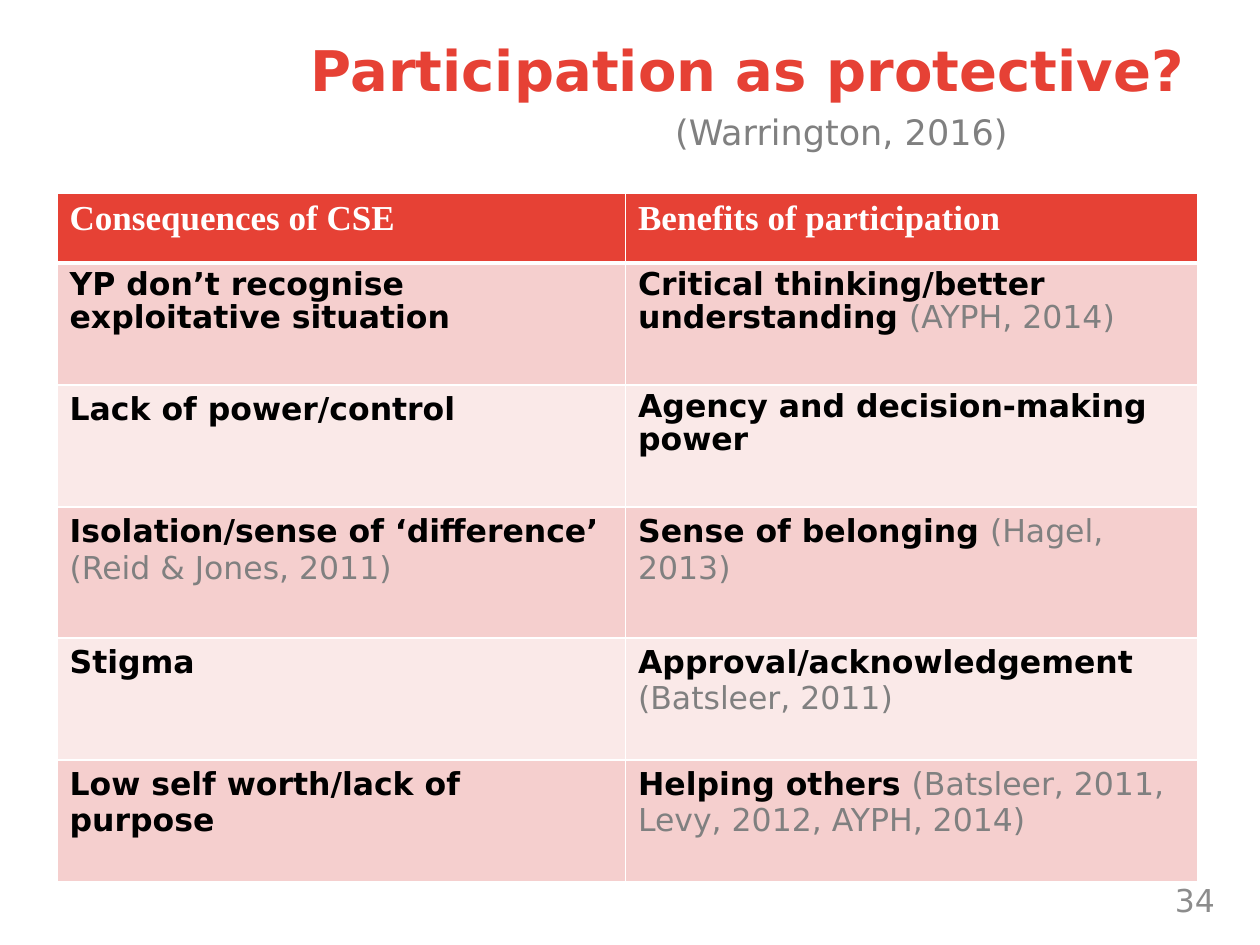
"""Build the slide on participation as protection, with its two-column table."""
from lxml import etree
from pptx import Presentation
from pptx import util as u
from pptx.dml.color import RGBColor
from pptx.enum import text
from pptx.oxml import ns

RED, WHITE, BLACK, GREY = "E64135", "FFFFFF", "000000", "808080"
BANDS = ("F5CFCE", "FAE9E8")
BODY_FONT, HEADER_FONT = "DejaVu Sans", "Times New Roman"

HEADERS = ("Consequences of CSE", "Benefits of participation")
ROWS = [
    (("YP don’t recognise exploitative situation", ""),
     ("Critical thinking/better understanding ", "(AYPH, 2014)")),
    (("Lack of power/control", ""),
     ("Agency and decision-making power", "")),
    (("Isolation/sense of ‘difference’ ", "(Reid & Jones, 2011)"),
     ("Sense of belonging ", "(Hagel, 2013)")),
    (("Stigma", ""),
     ("Approval/acknowledgement ", "(Batsleer, 2011)")),
    (("Low self worth/lack of purpose", ""),
     ("Helping others ", "(Batsleer, 2011, Levy, 2012, AYPH, 2014)")),
]
TIGHT_CELLS = {(1, 0), (1, 1), (2, 1)}
COLUMN_WIDTHS = (11.46, 11.53)
ROW_HEIGHTS = (1.41, 2.46, 2.46, 2.64, 2.46, 2.46)


def color(value):
    return RGBColor.from_string(value)


def add_run(paragraph, words, size, ink, bold=False, face=BODY_FONT):
    run = paragraph.add_run()
    run.text = words
    run.font.size = u.Pt(size)
    run.font.name = face
    run.font.bold = bold
    run.font.color.rgb = color(ink)


def add_label(slide, place, words, size, ink, bold=False, align=text.PP_ALIGN.LEFT,
              anchor=text.MSO_ANCHOR.TOP, wrap=True, spacing=None):
    frame = slide.shapes.add_textbox(*map(u.Cm, place)).text_frame
    frame.word_wrap = wrap
    frame.vertical_anchor = anchor
    paragraph = frame.paragraphs[0]
    paragraph.alignment = align
    paragraph.line_spacing = spacing
    add_run(paragraph, words, size, ink, bold)


def style_cell(cell, fill, bottom_width):
    cell.fill.solid()
    cell.fill.fore_color.rgb = color(fill)
    properties = cell._tc.get_or_add_tcPr()
    widths = {"lnL": 1, "lnR": 1, "lnT": 1, "lnB": bottom_width}
    for index, (side, width) in enumerate(widths.items()):
        line = etree.Element(ns.qn(f"a:{side}"), w=str(u.Pt(width)))
        solid = etree.SubElement(line, ns.qn("a:solidFill"))
        etree.SubElement(solid, ns.qn("a:srgbClr"), val=WHITE)
        properties.insert(index, line)


def add_comparison(slide):
    table = slide.shapes.add_table(
        len(ROWS) + 1, len(HEADERS), u.Cm(1.15), u.Cm(3.89),
        u.Cm(sum(COLUMN_WIDTHS)), u.Cm(sum(ROW_HEIGHTS))).table
    for column, width in zip(table.columns, COLUMN_WIDTHS):
        column.width = u.Cm(width)
    for row, height in zip(table.rows, ROW_HEIGHTS):
        row.height = u.Cm(height)
    for col, header in enumerate(HEADERS):
        cell = table.cell(0, col)
        style_cell(cell, RED, 3)
        add_run(cell.text_frame.paragraphs[0], header, 20, WHITE, True, HEADER_FONT)
    for row, points in enumerate(ROWS, 1):
        for col, (point, citation) in enumerate(points):
            cell = table.cell(row, col)
            style_cell(cell, BANDS[(row - 1) % 2], 1)
            paragraph = cell.text_frame.paragraphs[0]
            if (row, col) in TIGHT_CELLS:
                paragraph.line_spacing = 0.9
            add_run(paragraph, point, 18, BLACK, True)
            if citation:
                add_run(paragraph, citation, 18, GREY)


def main():
    deck = Presentation()
    deck.slide_width, deck.slide_height = u.Cm(25.4), u.Cm(19.05)
    slide = deck.slides.add_slide(deck.slide_layouts[6])
    add_label(slide, (0, 0.74, 24.13, 3.15), "Participation as protective?", 32, RED,
              bold=True, align=text.PP_ALIGN.RIGHT, spacing=0.9)
    add_comparison(slide)
    add_label(slide, (18.82, 17.63, 5.92, 1.02), "34", 18, "8C8C8C",
              align=text.PP_ALIGN.RIGHT, anchor=text.MSO_ANCHOR.MIDDLE)
    add_label(slide, (13.36, 2.11, 7.7, 1.12), "(Warrington, 2016)", 20, GREY, wrap=False)
    deck.save("out.pptx")


if __name__ == "__main__":
    main()
